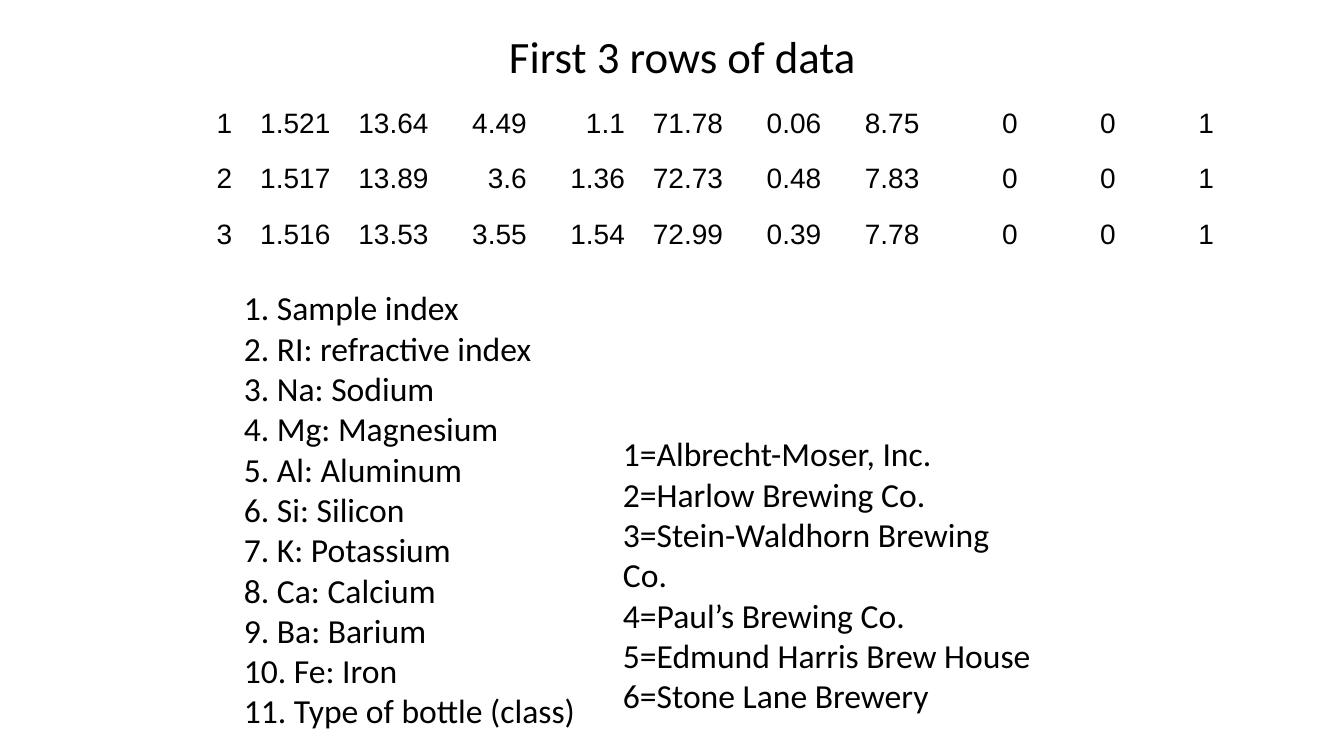
from pptx import Presentation
from pptx.dml.color import RGBColor
from pptx.enum.text import MSO_ANCHOR, PP_ALIGN
from pptx.util import Inches, Pt

BLACK = RGBColor(0x00, 0x00, 0x00)
WHITE = RGBColor(0xFF, 0xFF, 0xFF)
BOTTOM = MSO_ANCHOR.BOTTOM
RIGHT = PP_ALIGN.RIGHT

SAMPLES = [
    ["1", "1.521", "13.64", "4.49", "1.1", "71.78", "0.06", "8.75", "0", "0", "1"],
    ["2", "1.517", "13.89", "3.6", "1.36", "72.73", "0.48", "7.83", "0", "0", "1"],
    ["3", "1.516", "13.53", "3.55", "1.54", "72.99", "0.39", "7.78", "0", "0", "1"],
]
COLUMNS = [
    "Sample index", "RI: refractive index", "Na: Sodium", "Mg: Magnesium",
    "Al: Aluminum", "Si: Silicon", "K: Potassium", "Ca: Calcium",
    "Ba: Barium", "Fe: Iron", "Type of bottle (class)",
]
BREWERIES = [
    "Albrecht-Moser, Inc.", "Harlow Brewing Co.", "Stein-Waldhorn Brewing Co.",
    "Paul’s Brewing Co.", "Edmund Harris Brew House", "Stone Lane Brewery",
]


def style_text(paragraph, font_name, size):
    font_format = {"name": font_name, "size": Pt(size), "bold": False}
    for attribute, value in font_format.items():
        setattr(paragraph.font, attribute, value)
    paragraph.font.color.rgb = BLACK


def add_lines(lines, left, top, width, height, size):
    """Add a text box with one paragraph per line."""
    box = slide.shapes.add_textbox(Inches(left), Inches(top), Inches(width), Inches(height))
    box.text_frame.word_wrap = True
    box.text_frame.text = "\n".join(lines)
    for paragraph in box.text_frame.paragraphs:
        style_text(paragraph, "Calibri", size)
    return box


presentation = Presentation()
presentation.slide_width = Inches(13.33)
presentation.slide_height = Inches(7.5)
slide = presentation.slides.add_slide(presentation.slide_layouts[6])

# Sample table
table = slide.shapes.add_table(
    len(SAMPLES), len(COLUMNS), Inches(1.43), Inches(0.88), Inches(10.71), Inches(1.65)
).table
table.first_row = False
table.horz_banding = False
for row, sample in zip(table.rows, SAMPLES):
    row.height = Inches(0.55)
    for cell, value in zip(row.cells, sample):
        cell.text = value
        cell.fill.background()
        cell.vertical_anchor = BOTTOM
        paragraph = cell.text_frame.paragraphs[0]
        paragraph.alignment = RIGHT
        style_text(paragraph, "Arial", 20)

# Title and the two legends
add_lines(["First 3 rows of data"], 4.95, 0.24, 3.67, 0.64, 32)

column_lines = [f"{number}. {name}" for number, name in enumerate(COLUMNS, 1)]
column_legend = add_lines(column_lines, 2.32, 2.8, 3.52, 4.54, 24)
column_legend.fill.solid()
column_legend.fill.fore_color.rgb = WHITE

brewery_lines = [f"{number}={name}" for number, name in enumerate(BREWERIES, 1)]
add_lines(brewery_lines, 6.08, 4.25, 4.27, 2.52, 24)

presentation.save("out.pptx")
